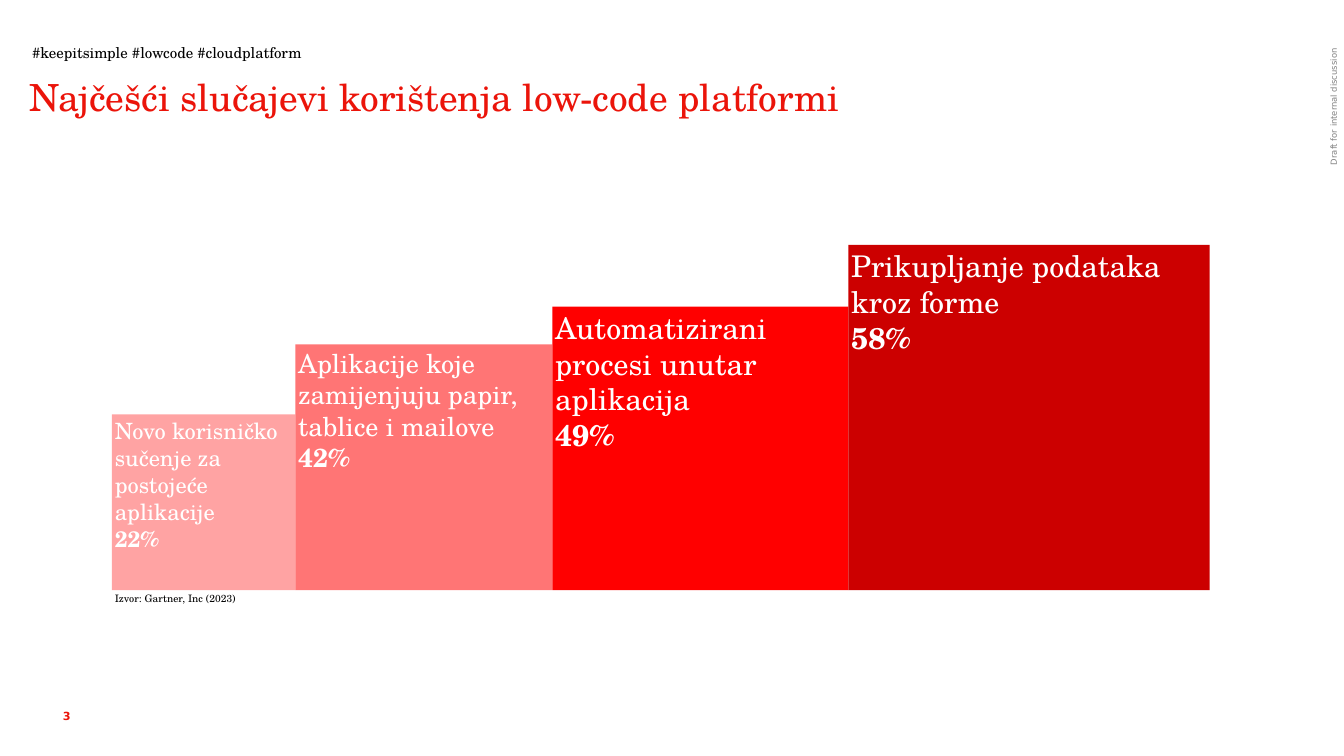
from pptx import Presentation
from pptx.dml.color import RGBColor
from pptx.enum.shapes import MSO_SHAPE
from pptx.enum.text import MSO_ANCHOR, PP_ALIGN
from pptx.util import Emu, Pt

RECTANGLE = MSO_SHAPE.RECTANGLE
TOP, MIDDLE = MSO_ANCHOR.TOP, MSO_ANCHOR.MIDDLE
LEFT, CENTER = PP_ALIGN.LEFT, PP_ALIGN.CENTER

EMU_PER_PX = 9525
SERIF, SANS = "TeX Gyre Schola", "DejaVu Sans"
RED, BLACK, WHITE, GREY = "EB140A", "000000", "FFFFFF", "808080"

STEPS_LEFT, STEPS_BOTTOM = 160, 843
STEPS = [
    ("Novo korisničko sučenje za postojeće aplikacije", "22%", 262, 251, 24, "FFA3A3"),
    ("Aplikacije koje zamijenjuju papir, tablice i mailove", "42%", 367, 351, 28, "FF7575"),
    ("Automatizirani procesi unutar aplikacija", "49%", 423, 405, 32, "FF0000"),
    ("Prikupljanje podataka kroz forme", "58%", 516, 493, 32, "CC0000"),
]


def px(length):
    """Turn whole pixels into EMU."""
    return Emu(length * EMU_PER_PX)


def color(value):
    """Turn a hex string into a colour."""
    return RGBColor.from_string(value)


def set_frame(frame, insets=(0, 0, 0, 0), anchor=TOP):
    """Set wrapping, anchor and left, top, right and bottom insets."""
    frame.word_wrap = True
    frame.vertical_anchor = anchor
    frame.margin_left, frame.margin_top, frame.margin_right, frame.margin_bottom = map(px, insets)


def write(paragraph, text, size=16, font=SERIF, ink=BLACK, bold=False, align=LEFT, spacing=1.0):
    """Write one formatted run into a paragraph."""
    paragraph.alignment = align
    paragraph.line_spacing = spacing
    run = paragraph.add_run()
    run.text = text
    run.font.size = Pt(size)
    run.font.name = font
    run.font.bold = bold
    run.font.color.rgb = color(ink)


def add_label(slide, text, box, insets=(0, 0, 0, 0), anchor=TOP, rotation=0, **style):
    """Add a single-paragraph text box."""
    label = slide.shapes.add_textbox(*map(px, box))
    label.rotation = rotation
    set_frame(label.text_frame, insets, anchor)
    write(label.text_frame.paragraphs[0], text, **style)


def add_step(slide, use_case, share, box, size, fill):
    """Add one stair block with its use case and share."""
    step = slide.shapes.add_shape(RECTANGLE, *map(px, box))
    step.shadow.inherit = False
    step.fill.solid()
    step.fill.fore_color.rgb = color(fill)
    step.line.fill.background()
    frame = step.text_frame
    set_frame(frame, (4, 4, 4, 4))
    write(frame.paragraphs[0], use_case, size=size, ink=WHITE)
    write(frame.add_paragraph(), share, size=size, ink=WHITE, bold=True)


def add_stairs(slide):
    """Place the blocks side by side on a common base line."""
    left = STEPS_LEFT
    for use_case, share, width, height, size, fill in STEPS:
        box = (left, STEPS_BOTTOM - height, width, height)
        add_step(slide, use_case, share, box, size, fill)
        left += width


def main():
    """Build and save the slide."""
    deck = Presentation()
    deck.slide_width, deck.slide_height = px(1920), px(1080)
    slide = deck.slides.add_slide(deck.slide_layouts[6])
    add_label(slide, "Draft for internal discussion", (1752, 137, 305, 31), (10, 5, 10, 5),
              MIDDLE, 270, size=9, font=SANS, ink=GREY, align=CENTER, spacing=1.1)
    add_label(slide, "3", (90, 992, 64, 62), anchor=MIDDLE, size=12, font=SANS, ink=RED, bold=True)
    add_label(slide, "Najčešći slučajevi korištenja low-code platformi", (42, 106, 1740, 121),
              size=40, ink=RED)
    add_label(slide, "#keepitsimple #lowcode #cloudplatform", (42, 60, 1740, 33), (4, 0, 0, 0),
              spacing=1.1)
    add_label(slide, "Izvor: Gartner, Inc (2023)", (STEPS_LEFT, 845, 246, 33), (4, 0, 0, 0),
              size=11, spacing=1.1)
    add_stairs(slide)
    deck.save("out.pptx")


if __name__ == "__main__":
    main()
